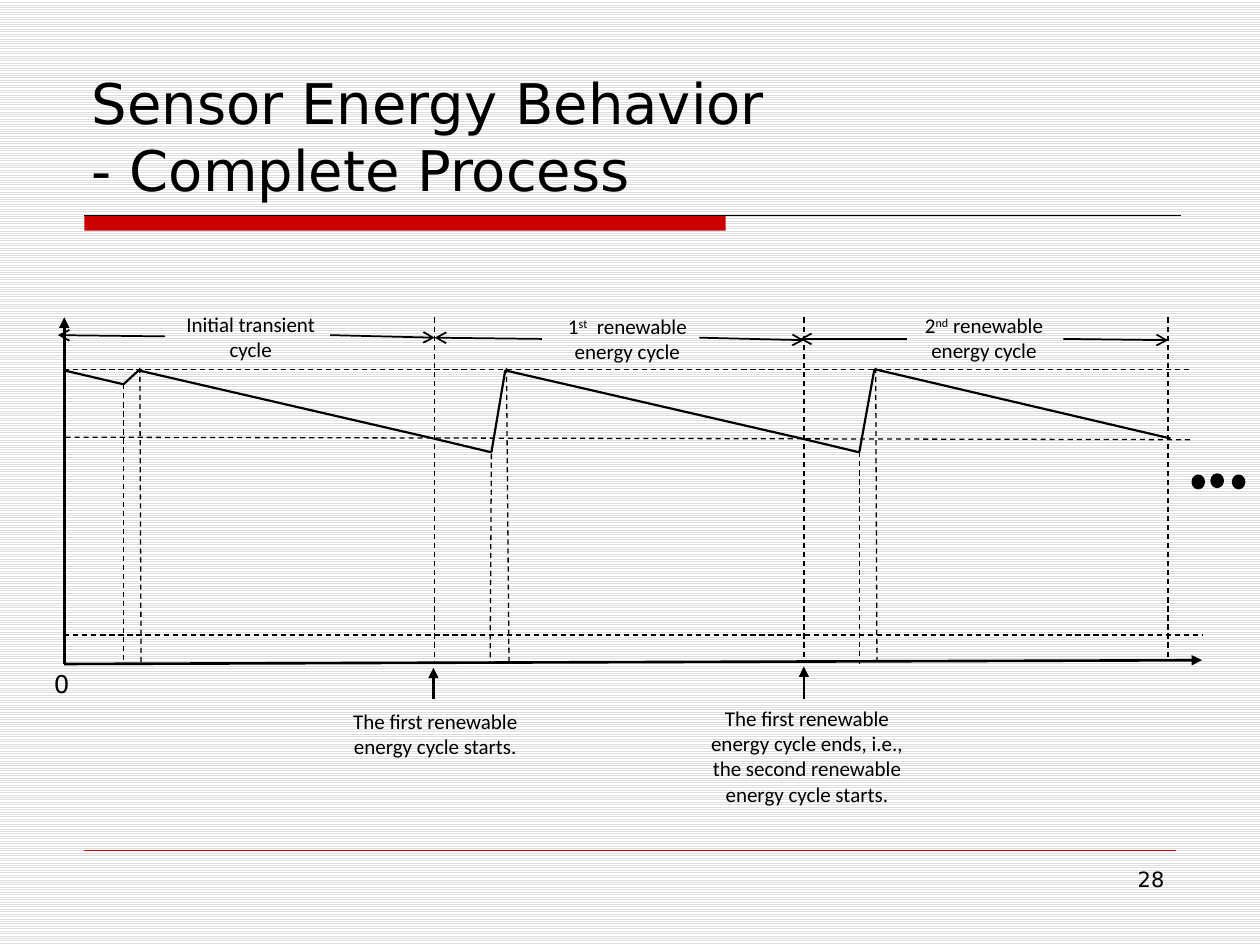
from itertools import pairwise
from typing import NamedTuple

from lxml.etree import SubElement
from pptx import Presentation
from pptx.dml.color import RGBColor
from pptx.enum.dml import MSO_LINE_DASH_STYLE as DASH, MSO_PATTERN_TYPE as PATTERN
from pptx.enum.shapes import MSO_CONNECTOR_TYPE as CONNECTOR, MSO_SHAPE as SHAPE
from pptx.enum.text import MSO_ANCHOR as ANCHOR, PP_ALIGN as ALIGN
from pptx.oxml.ns import qn
from pptx.util import Emu, Pt

PX = 9144  # 100 px to the inch
COLORS = {"ink": "000000", "accent": "CC0000", "stripe": "DDDDDD", "paper": "FFFFFF"}
SANS, LABEL = "DejaVu Sans", "Calibri"


class Label(NamedTuple):
    """Text in a box; parts between ^ marks are superscript, | breaks a line."""
    x: int
    y: int
    w: int
    h: int
    paragraphs: tuple[str, ...]
    size: int = 12
    font: str = LABEL
    align: ALIGN = ALIGN.CENTER
    anchor: ANCHOR = ANCHOR.TOP


class Line(NamedTuple):
    x1: int
    y1: int
    x2: int
    y2: int
    width: float = 0.75
    dashed: bool = False
    head: str = ""
    tail: str = ""
    color: str = "ink"


def px(n: int) -> Emu:
    return Emu(n * PX)


def rgb(name: str) -> RGBColor:
    return RGBColor.from_string(COLORS[name])


def draw_line(s, line: Line) -> None:
    c = s.shapes.add_connector(CONNECTOR.STRAIGHT, px(line.x1), px(line.y1),
                               px(line.x2), px(line.y2))
    c.line.color.rgb = rgb(line.color)
    c.line.width = Pt(line.width)
    if line.dashed:
        c.line.dash_style = DASH.DASH
    ln = c.line._get_or_add_ln()
    for end, kind in (("a:headEnd", line.head), ("a:tailEnd", line.tail)):
        if kind:
            SubElement(ln, qn(end), type=kind)
    SubElement(c._element.spPr, qn("a:effectLst"))


def draw_shape(s, kind: SHAPE, x: int, y: int, w: int, h: int,
               color: str, outline: float = 0) -> None:
    sp = s.shapes.add_shape(kind, px(x), px(y), px(w), px(h))
    sp.shadow.inherit = False
    sp.fill.solid()
    sp.fill.fore_color.rgb = rgb(color)
    if outline:
        sp.line.color.rgb = rgb(color)
        sp.line.width = Pt(outline)
    else:
        sp.line.fill.background()


def add_runs(p, text: str) -> None:
    for i, row in enumerate(text.split("|")):
        if i:
            p.add_line_break()
        for j, part in enumerate(row.split("^")):
            r = p.add_run()
            r.text = part
            if j % 2:
                r._r.get_or_add_rPr().set("baseline", "30000")


def draw_label(s, label: Label) -> None:
    tf = s.shapes.add_textbox(px(label.x), px(label.y), px(label.w), px(label.h)).text_frame
    tf.word_wrap = True
    tf.vertical_anchor = label.anchor
    for i, text in enumerate(label.paragraphs):
        p = tf.add_paragraph() if i else tf.paragraphs[0]
        p.alignment = label.align
        p.font.size = Pt(label.size)
        p.font.name = label.font
        p.font.color.rgb = rgb("ink")
        add_runs(p, text)


FRAME_LINES = (
    Line(67, 171, 937, 171),
    Line(67, 675, 933, 675, 0.25, color="accent"),
)
AXES = (
    Line(51, 252, 51, 527, 1.5, head="triangle"),
    Line(51, 527, 954, 524, 1.5, tail="triangle"),
)
GUIDES = (
    (51, 293, 946, 293), (52, 347, 946, 349), (51, 504, 954, 504),  # energy levels
    (345, 252, 345, 526), (638, 252, 638, 524), (927, 252, 927, 522),  # cycle bounds
    (98, 305, 98, 527), (111, 292, 112, 527),  # recharge start and end
    (390, 360, 389, 526), (402, 292, 404, 527),
    (682, 359, 682, 527), (695, 292, 696, 524),
)
ENERGY = ((51, 294), (98, 305), (110, 294), (344, 348), (390, 359), (401, 294),
          (636, 348), (682, 359), (694, 293), (929, 348))
SPANS = (
    (131, 267, 46, 266), (262, 266, 345, 268),
    (430, 269, 345, 268), (555, 268, 638, 270),
    (720, 269, 635, 269), (844, 269, 927, 270),
)
CYCLE_MARKS = ((344, 555, 344, 530), (638, 555, 638, 529))
DOTS = ((947, 378), (962, 377), (979, 378))
LABELS = (
    Label(63, 33, 875, 133, ("Sensor Energy Behavior|- Complete Process",), 32, SANS,
          ALIGN.LEFT, ANCHOR.BOTTOM),
    Label(131, 242, 136, 51, ("Initial transient cycle",)),
    Label(430, 244, 136, 51, ("1^st^  renewable", "energy cycle")),
    Label(713, 243, 136, 51, ("2^nd^ renewable", "energy cycle")),
    Label(270, 557, 151, 51, ("The first renewable energy cycle starts.",)),
    Label(541, 555, 199, 91, ("The first renewable energy cycle ends, i.e.,",
                              "the second renewable energy cycle starts.")),
    Label(33, 526, 39, 34, ("0",), 14, SANS, ALIGN.LEFT),
    Label(717, 683, 217, 52, ("28",), 12, SANS, ALIGN.RIGHT),
)


def main() -> None:
    prs = Presentation()
    prs.slide_width, prs.slide_height = px(1000), px(750)
    s = prs.slides.add_slide(prs.slide_layouts[6])
    fill = s.background.fill
    fill.patterned()
    fill.pattern = PATTERN.LIGHT_HORIZONTAL
    fill.fore_color.rgb = rgb("stripe")
    fill.back_color.rgb = rgb("paper")

    draw_shape(s, SHAPE.RECTANGLE, 67, 171, 509, 12, "accent")
    lines = [
        *FRAME_LINES,
        *AXES,
        *(Line(*g, dashed=True) for g in GUIDES),
        *(Line(*a, *b, 1.25) for a, b in pairwise(ENERGY)),
        *(Line(*a, 1, tail="arrow") for a in SPANS),
        *(Line(*m, 1.25, tail="triangle") for m in CYCLE_MARKS),
    ]
    for line in lines:
        draw_line(s, line)
    for x, y in DOTS:
        draw_shape(s, SHAPE.OVAL, x, y, 8, 9, "ink", 2)
    for label in LABELS:
        draw_label(s, label)
    prs.save("out.pptx")


if __name__ == "__main__":
    main()
